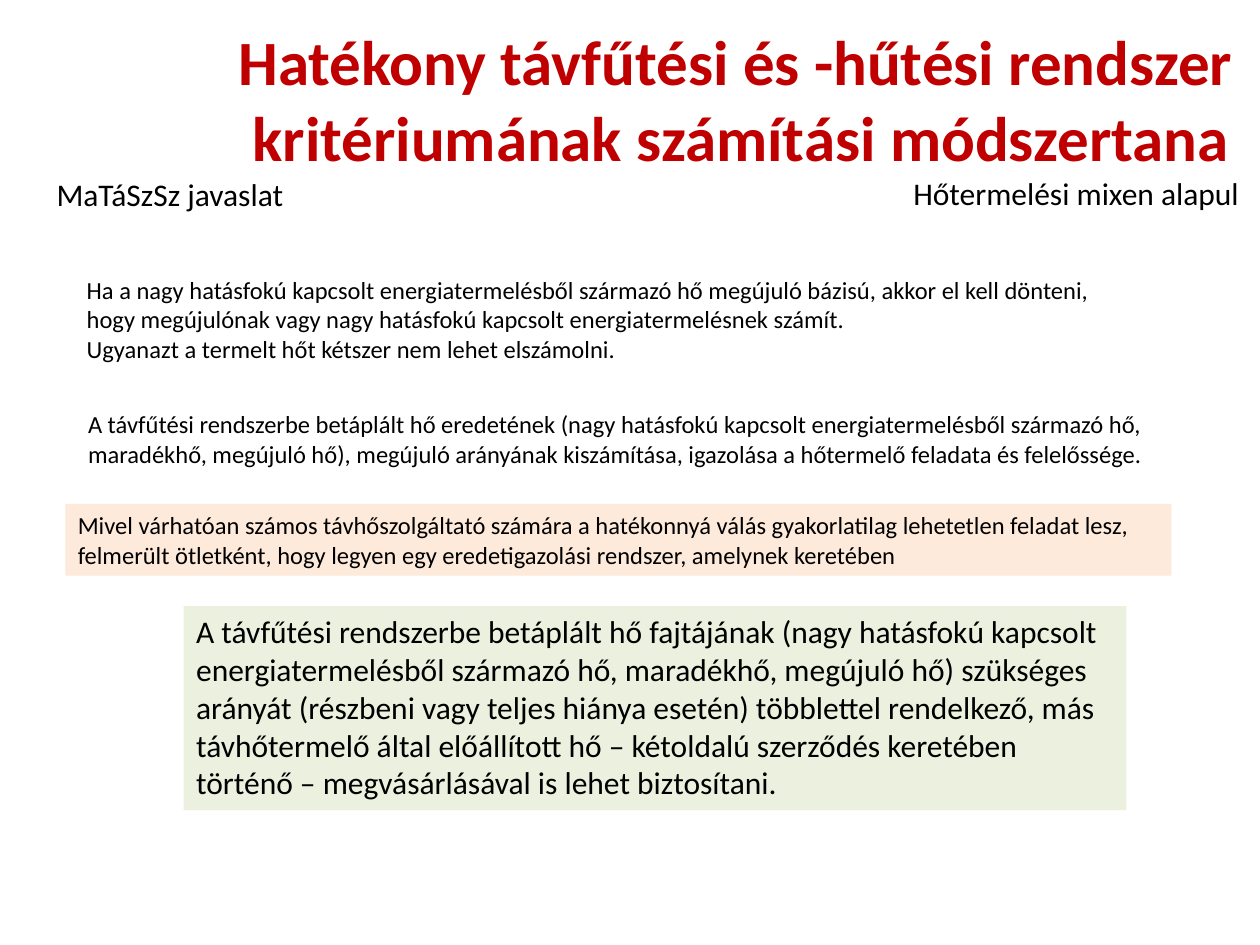
from pptx import Presentation
from pptx.dml.color import RGBColor
from pptx.enum.shapes import MSO_SHAPE
from pptx.enum.text import MSO_ANCHOR, MSO_AUTO_SIZE, PP_ALIGN
from pptx.util import Pt

FONT = "Calibri"
BLACK = "000000"
RED = "C00000"
PEACH = "FDEADA"
GREEN = "EBF1DE"


def color(value):
    return RGBColor.from_string(value)


def write(shape, lines, size, font_color=BLACK, bold=False, wrap=False):
    frame = shape.text_frame
    frame.word_wrap = wrap
    frame.auto_size = MSO_AUTO_SIZE.NONE
    frame.vertical_anchor = MSO_ANCHOR.TOP
    for index, line in enumerate(lines):
        paragraph = frame.add_paragraph() if index else frame.paragraphs[0]
        paragraph.alignment = PP_ALIGN.LEFT
        run = paragraph.add_run()
        run.text = line
        run.font.name = FONT
        run.font.size = Pt(size)
        run.font.bold = bold
        run.font.color.rgb = color(font_color)


def place_title(slide, box, lines):
    title = slide.shapes.title
    title.left, title.top, title.width, title.height = map(Pt, box)
    write(title, lines, 36, RED, bold=True)


def add_text(slide, box, lines, size):
    write(slide.shapes.add_textbox(*map(Pt, box)), lines, size)


def add_panel(slide, box, text, size, fill):
    panel = slide.shapes.add_shape(MSO_SHAPE.RECTANGLE, *map(Pt, box))
    panel.shadow.inherit = False
    panel.fill.solid()
    panel.fill.fore_color.rgb = color(fill)
    panel.line.fill.background()
    write(panel, [text], size, wrap=True)


def build_slide(presentation):
    slide = presentation.slides.add_slide(presentation.slide_layouts[5])
    place_title(slide, (129, 9.4, 588, 94.5), [
        "Hatékony távfűtési és -hűtési rendszer",
        " kritériumának számítási módszertana",
    ])
    add_text(slide, (25.2, 96.5, 145.5, 29), ["MaTáSzSz javaslat"], 18)
    add_text(slide, (514.8, 95.8, 203, 29), ["Hőtermelési mixen alapul"], 18)
    add_text(slide, (42.5, 153.4, 596, 58.3), [
        "Ha a nagy hatásfokú kapcsolt energiatermelésből származó hő megújuló bázisú, akkor el kell dönteni,",
        "hogy megújulónak vagy nagy hatásfokú kapcsolt energiatermelésnek számít.",
        "Ugyanazt a termelt hőt kétszer nem lehet elszámolni.",
    ], 14)
    add_text(slide, (43.2, 230.4, 625.7, 41), [
        "A távfűtési rendszerbe betáplált hő eredetének (nagy hatásfokú kapcsolt energiatermelésből származó hő,",
        "maradékhő, megújuló hő), megújuló arányának kiszámítása, igazolása a hőtermelő feladata és felelőssége.",
    ], 14)
    add_panel(
        slide, (37.4, 288, 632, 41),
        "Mivel várhatóan számos távhőszolgáltató számára a hatékonnyá válás gyakorlatilag "
        "lehetetlen feladat lesz, felmerült ötletként, hogy legyen egy eredetigazolási rendszer, "
        "amelynek keretében",
        14, PEACH)
    add_panel(
        slide, (105, 346.3, 538.6, 116.6),
        "A távfűtési rendszerbe betáplált hő fajtájának (nagy hatásfokú kapcsolt "
        "energiatermelésből származó hő, maradékhő, megújuló hő) szükséges arányát "
        "(részbeni vagy teljes hiánya esetén) többlettel rendelkező, más távhőtermelő által "
        "előállított hő – kétoldalú szerződés keretében történő – megvásárlásával is lehet "
        "biztosítani.",
        18, GREEN)


def main():
    presentation = Presentation()
    presentation.slide_width = Pt(720)
    presentation.slide_height = Pt(540)
    build_slide(presentation)
    presentation.save("out.pptx")


if __name__ == "__main__":
    main()
